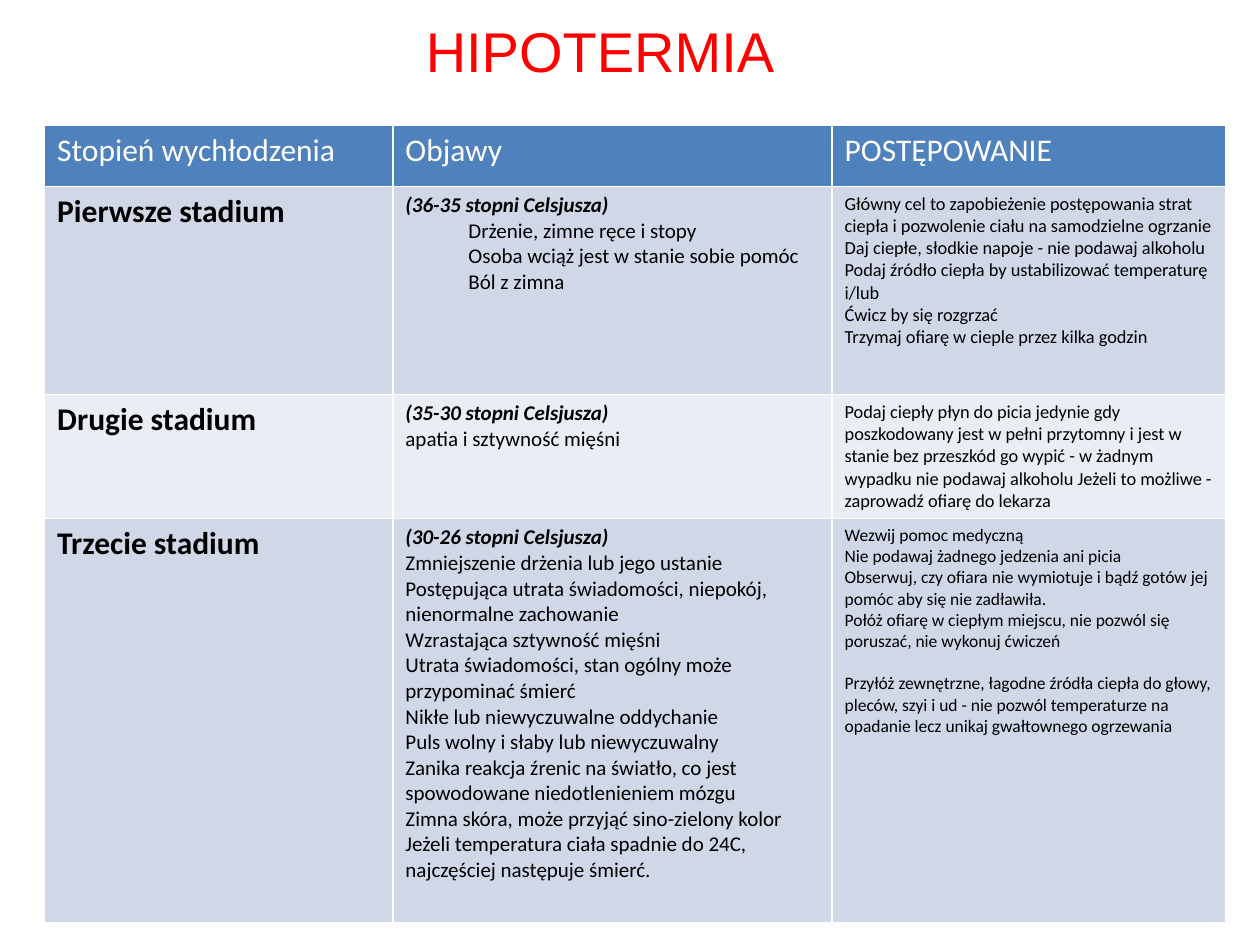
from pptx import Presentation
from pptx.dml.color import RGBColor
from pptx.enum.text import MSO_ANCHOR, PP_ALIGN
from pptx.util import Pt

MIDDLE = MSO_ANCHOR.MIDDLE
CENTER = PP_ALIGN.CENTER

RED = RGBColor(0xFF, 0x00, 0x00)
WHITE = RGBColor(0xFF, 0xFF, 0xFF)
BLACK = RGBColor(0x00, 0x00, 0x00)
BLUE = RGBColor(0x4F, 0x81, 0xBD)
BANDS = [RGBColor(0xD0, 0xD8, 0xE8), RGBColor(0xE9, 0xED, 0xF4)]

COLS = [199, 251, 225]
ROWS = [35, 119, 70, 231]
HEADS = ["Stopień wychłodzenia", "Objawy", "POSTĘPOWANIE"]

# Each stage: name, range, signs, sign indent, care, care size, gap before last care line
STAGES = [
    ("Pierwsze stadium", "(36-35 stopni Celsjusza)", [
        "Drżenie, zimne ręce i stopy",
        "Osoba wciąż jest w stanie sobie pomóc",
        "Ból z zimna",
    ], 36, [
        "Główny cel to zapobieżenie postępowania strat ciepła i pozwolenie "
        "ciału na samodzielne ogrzanie",
        "Daj ciepłe, słodkie napoje - nie podawaj alkoholu",
        "Podaj źródło ciepła by ustabilizować temperaturę i/lub",
        "Ćwicz by się rozgrzać",
        "Trzymaj ofiarę w cieple przez kilka godzin",
    ], 10.5, 0),
    ("Drugie stadium", "(35-30 stopni Celsjusza)", [
        "apatia i sztywność mięśni",
    ], 0, [
        "Podaj ciepły płyn do picia jedynie gdy poszkodowany jest w pełni "
        "przytomny i jest w stanie bez przeszkód go wypić - w żadnym wypadku "
        "nie podawaj alkoholu Jeżeli to możliwe - zaprowadź ofiarę do lekarza",
    ], 10.5, 0),
    ("Trzecie stadium", "(30-26 stopni Celsjusza)", [
        "Zmniejszenie drżenia lub jego ustanie Postępująca utrata świadomości, "
        "niepokój, nienormalne zachowanie",
        "Wzrastająca sztywność mięśni",
        "Utrata świadomości, stan ogólny może przypominać śmierć",
        "Nikłe lub niewyczuwalne oddychanie",
        "Puls wolny i słaby lub niewyczuwalny",
        "Zanika reakcja źrenic na światło, co jest spowodowane "
        "niedotlenieniem mózgu",
        "Zimna skóra, może przyjąć sino-zielony kolor",
        "Jeżeli temperatura ciała spadnie do 24C, najczęściej następuje śmierć.",
    ], 0, [
        "Wezwij pomoc medyczną",
        "Nie podawaj żadnego jedzenia ani picia",
        "Obserwuj, czy ofiara nie wymiotuje i bądź gotów jej pomóc aby się "
        "nie zadławiła.",
        "Połóż ofiarę w ciepłym miejscu, nie pozwól się poruszać, "
        "nie wykonuj ćwiczeń",
        "Przyłóż zewnętrzne, łagodne źródła ciepła do głowy, pleców, szyi i ud "
        "- nie pozwól temperaturze na opadanie lecz unikaj gwałtownego "
        "ogrzewania",
    ], 10, 12),
]


def write(frame, text, size=18, color=BLACK, font="Calibri", bold=False,
          italic=False, align=None, indent=0, before=0):
    """Fill the first paragraph if it is empty, else add one."""
    para = frame.paragraphs[-1]
    if para.runs:
        para = frame.add_paragraph()
    if align is not None:
        para.alignment = align
    if indent:
        para.level = 1
        props = para._p.get_or_add_pPr()
        props.set("marL", str(Pt(indent)))
        props.set("indent", "0")
    if before:
        para.space_before = Pt(before)
    run = para.add_run()
    run.text = text
    run.font.size = Pt(size)
    run.font.name = font
    run.font.bold = bold
    run.font.italic = italic
    run.font.color.rgb = color


def add_title(slide, left, top, width, height):
    title = slide.shapes.title
    title.left, title.top = Pt(left), Pt(top)
    title.width, title.height = Pt(width), Pt(height)
    title.text_frame.vertical_anchor = MIDDLE
    write(title.text_frame, "HIPOTERMIA", size=32, color=RED, font="Arial",
          align=CENTER)


def shade(cell, color):
    cell.fill.solid()
    cell.fill.fore_color.rgb = color
    return cell.text_frame


def add_stages(slide, left, top):
    table = slide.shapes.add_table(len(ROWS), len(COLS), Pt(left), Pt(top),
                                   Pt(sum(COLS)), Pt(sum(ROWS))).table
    for col, width in zip(table.columns, COLS):
        col.width = Pt(width)
    for row, height in zip(table.rows, ROWS):
        row.height = Pt(height)

    # Header row
    for col, head in enumerate(HEADS):
        write(shade(table.cell(0, col), BLUE), head, color=WHITE)

    # One row per stage
    for row, stage in enumerate(STAGES, 1):
        name, span, signs, indent, care, size, gap = stage
        band = BANDS[(row - 1) % 2]
        first, second, third = [shade(table.cell(row, col), band)
                                for col in range(len(COLS))]
        write(first, name, bold=True)
        write(second, span, size=12, bold=True, italic=True)
        for sign in signs:
            write(second, sign, size=12, indent=indent)
        for step in care[:-1]:
            write(third, step, size=size)
        write(third, care[-1], size=size, before=gap)


def main():
    deck = Presentation()
    deck.slide_width, deck.slide_height = Pt(720), Pt(540)
    slide = deck.slides.add_slide(deck.slide_layouts[5])
    add_title(slide, 37, 0, 612, 57)
    add_stages(slide, 25.5, 71.5)
    deck.save("out.pptx")


if __name__ == "__main__":
    main()
